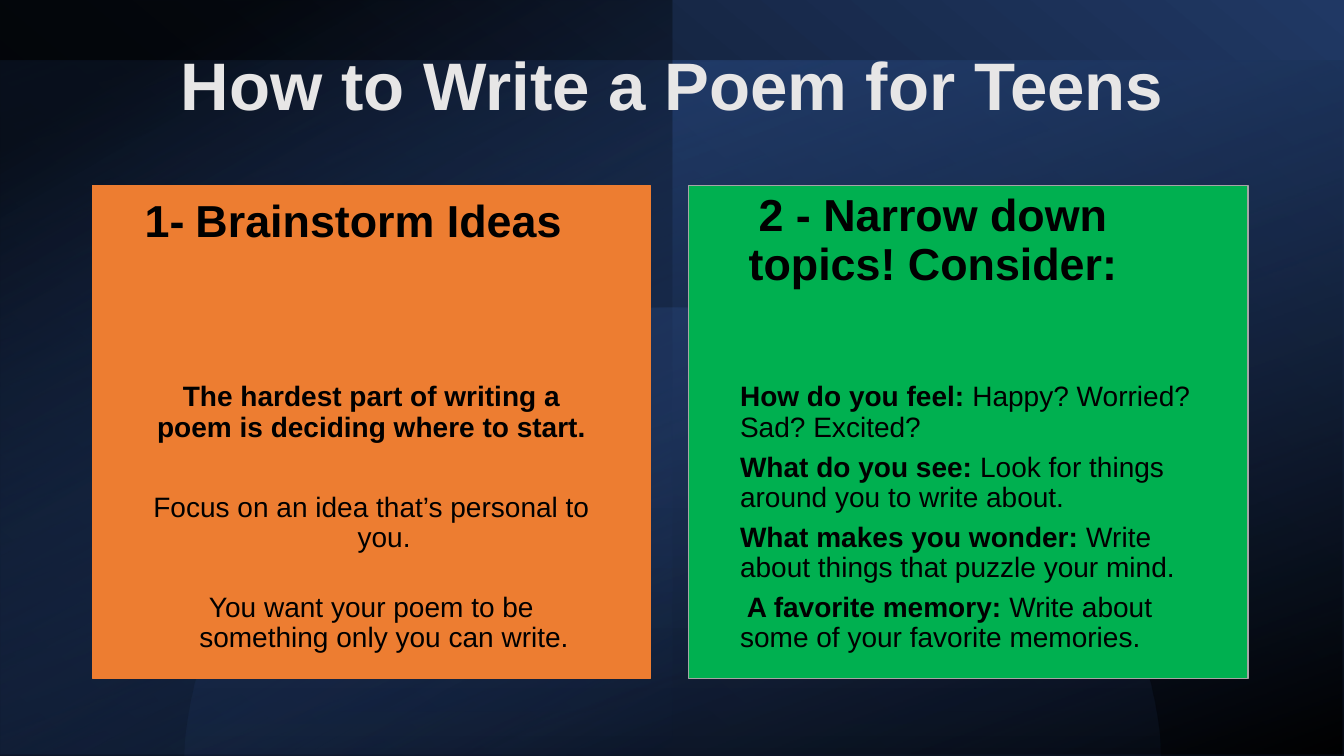
from pptx import Presentation
from pptx.dml.color import RGBColor
from pptx.enum.shapes import MSO_SHAPE
from pptx.enum.text import MSO_ANCHOR, MSO_AUTO_SIZE, PP_ALIGN
from pptx.oxml import parse_xml
from pptx.oxml.ns import nsdecls
from pptx.util import Inches, Pt

RECT = MSO_SHAPE.RECTANGLE
TOP, MIDDLE, BOTTOM = MSO_ANCHOR.TOP, MSO_ANCHOR.MIDDLE, MSO_ANCHOR.BOTTOM
LEFT, CENTER = PP_ALIGN.LEFT, PP_ALIGN.CENTER
NO_FIT = MSO_AUTO_SIZE.NONE

BLACK = RGBColor(0x00, 0x00, 0x00)
PALE = RGBColor(0xE7, 0xE6, 0xE6)
NAVY = RGBColor(0x20, 0x38, 0x64)
DENIM = RGBColor(0x2F, 0x55, 0x97)
BLUE = RGBColor(0x44, 0x72, 0xC4)
ORANGE = RGBColor(0xED, 0x7D, 0x31)
GREEN = RGBColor(0x00, 0xB0, 0x50)
GRAY = RGBColor(0xA5, 0xA5, 0xA5)

# Content: a run is (text, size, bold); a paragraph is (runs, space after, hanging)
TITLE = "How to Write a Poem for Teens"
QUESTIONS = [
    ("How do you feel: ", "Happy? Worried? Sad? Excited?"),
    ("What do you see: ", "Look for things around you to write about."),
    ("What makes you wonder: ", "Write about things that puzzle your mind."),
    (" A favorite memory: ", "Write about some of your favorite memories."),
]
BRAINSTORM = [
    ([("The hardest part of writing a poem is deciding where to start.", 20, True)], 36, False),
    ([("Focus on an idea that’s personal to you.", 20, False)], 28, True),
    ([("You want your poem to be something only you can write.", 20, False)], 0, True),
]
NARROW_DOWN = [([(question, 20, True), (answer, 20, False)], 7, False)
               for question, answer in QUESTIONS]

# Panels: left, width, fill, line, heading left, heading height, heading, body, alignment
PANELS = [
    (0.92, 5.53, ORANGE, ORANGE, 0.92, 0.75,
     [("1-", 32, True), (" ", 28, True), ("Brainstorm Ideas", 32, True)], BRAINSTORM, CENTER),
    (6.83, 5.55, GREEN, GRAY, 6.67, 1.11,
     [("2 - Narrow down topics! Consider:", 32, True)], NARROW_DOWN, LEFT),
]

# Layout in inches
SLIDE_W, SLIDE_H = 13.33, 7.5
PANEL_TOP, PANEL_H = 1.84, 4.89
BODY_SHARE = 0.6
HEADING_W = 5.17
SIDE_INSET, HEADING_INSET, BODY_BOTTOM_INSET = 0.51, 0.18, 0.36
HANG = 0.25

# Backdrop: box as shares of the slide, stops (position, colour, opacity), angle
BACKDROP = [
    ((0, 0, 1, 1), [(0, NAVY, 100), (100, BLACK, 100)], 130),
    ((0, 0.08, 1, 0.92), [(1, DENIM, 59), (100, BLACK, 100)], 70),
    ((0, 0, 0.5, 1), [(13, BLACK, 72), (99, NAVY, 0)], 60),
]
DOME_STOPS = [(0, BLUE, 5), (68, BLUE, 15)]
DOME_START = (1.84, 7.32)
DOME_CURVES = [
    ((1.84, 7.32), (2.09, 4.92), (4.15, 3.05), (6.67, 3.05)),
    ((6.67, 3.05), (9.18, 3.05), (11.25, 4.92), (11.5, 7.32)),
]
DOME_BASE = [(11.51, 7.5), (1.83, 7.5)]
CURVE_STEPS = 40


def fill_gradient(shape, stops, angle):
    shape.shadow.inherit = False
    shape.line.fill.background()
    shape.fill.background()
    stop_xml = "".join(
        f'<a:gs pos="{pos * 1000}"><a:srgbClr val="{color}">'
        f'<a:alpha val="{opacity * 1000}"/></a:srgbClr></a:gs>'
        for pos, color, opacity in stops)
    gradient = parse_xml(
        f'<a:gradFill {nsdecls("a")} rotWithShape="1"><a:gsLst>{stop_xml}</a:gsLst>'
        f'<a:lin ang="{angle * 60000}" scaled="0"/></a:gradFill>')
    properties = shape._element.spPr
    properties.replace(properties.find(".//{*}noFill"), gradient)


def curve_point(curve, t):
    weights = ((1 - t) ** 3, 3 * t * (1 - t) ** 2, 3 * t ** 2 * (1 - t), t ** 3)
    return tuple(sum(w * point[axis] for w, point in zip(weights, curve))
                 for axis in (0, 1))


def write_paragraphs(frame, paragraphs, align, color):
    for index, (runs, space_after, hanging) in enumerate(paragraphs):
        paragraph = frame.add_paragraph() if index else frame.paragraphs[0]
        paragraph.alignment = align
        paragraph.line_spacing = 0.9
        paragraph.space_before = Pt(0)
        paragraph.space_after = Pt(space_after)
        paragraph.font.name = "Arial"
        paragraph.font.color.rgb = color
        if hanging:
            indents = paragraph._p.get_or_add_pPr()
            indents.set("marL", str(Inches(HANG)))
            indents.set("indent", str(-Inches(HANG)))
        for text, size, bold in runs:
            run = paragraph.add_run()
            run.text = text
            run.font.name = "Arial"
            run.font.size = Pt(size)
            run.font.bold = bold
            run.font.color.rgb = color


def add_text(slide, box, paragraphs, align, anchor, top_inset, bottom_inset):
    frame = slide.shapes.add_textbox(*map(Inches, box)).text_frame
    frame.word_wrap = True
    frame.auto_size = NO_FIT
    frame.vertical_anchor = anchor
    frame.margin_left = frame.margin_right = Inches(SIDE_INSET)
    frame.margin_top, frame.margin_bottom = Inches(top_inset), Inches(bottom_inset)
    write_paragraphs(frame, paragraphs, align, BLACK)


def add_backdrop(slide):
    for (x, y, w, h), stops, angle in BACKDROP:
        box = (x * SLIDE_W, y * SLIDE_H, w * SLIDE_W, h * SLIDE_H)
        fill_gradient(slide.shapes.add_shape(RECT, *map(Inches, box)), stops, angle)
    arc = [curve_point(curve, step / CURVE_STEPS)
           for curve in DOME_CURVES for step in range(1, CURVE_STEPS + 1)]
    outline = slide.shapes.build_freeform(*map(Inches, DOME_START), scale=1.0)
    outline.add_line_segments([(Inches(x), Inches(y)) for x, y in arc + DOME_BASE], close=True)
    fill_gradient(outline.convert_to_shape(), DOME_STOPS, 270)


def add_title(slide):
    title = slide.shapes.title
    title.left, title.top, title.width, title.height = map(Inches, (1.23, 0.1, 10.88, 1.19))
    frame = title.text_frame
    frame.word_wrap = True
    frame.auto_size = NO_FIT
    frame.vertical_anchor = BOTTOM
    write_paragraphs(frame, [([(TITLE, 48, True)], 0, False)], CENTER, PALE)
    # Bring the title in front of the backdrop
    slide.shapes._spTree.append(title._element)


def add_panel(slide, left, width, fill, line, heading_left, heading_h, heading, body, align):
    card = slide.shapes.add_shape(RECT, *map(Inches, (left, PANEL_TOP, width, PANEL_H)))
    card.shadow.inherit = False
    card.fill.solid()
    card.fill.fore_color.rgb = fill
    card.line.color.rgb = line
    card.line.width = Pt(1)
    body_h = BODY_SHARE * PANEL_H
    add_text(slide, (left, PANEL_TOP + PANEL_H - body_h, width, body_h),
             body, align, TOP, 0, BODY_BOTTOM_INSET)
    add_text(slide, (heading_left, PANEL_TOP, HEADING_W, heading_h),
             [(heading, 0, False)], CENTER, MIDDLE, HEADING_INSET, HEADING_INSET)


def main():
    deck = Presentation()
    deck.slide_width, deck.slide_height = Inches(SLIDE_W), Inches(SLIDE_H)
    slide = deck.slides.add_slide(deck.slide_layouts[5])
    add_backdrop(slide)
    add_title(slide)
    for panel in PANELS:
        add_panel(slide, *panel)
    deck.save("out.pptx")


if __name__ == "__main__":
    main()
